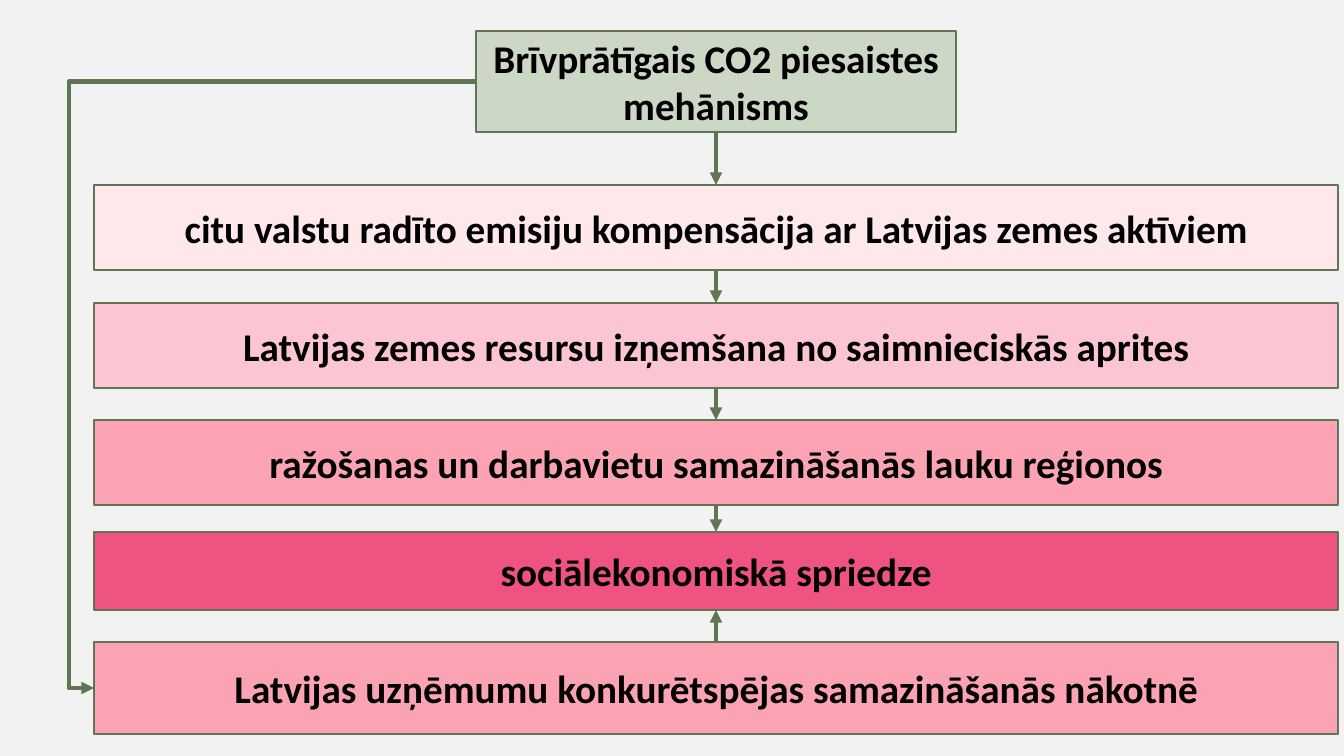
from lxml import etree
from pptx import Presentation
from pptx import util as u
from pptx.dml.color import RGBColor
from pptx.enum import shapes, text
from pptx.oxml.ns import qn

PX = 914400 / 100.8
GREEN = "5F7553"
TOP, LEFT, BOTTOM = 0, 1, 2  # connection sites of a rectangle
ROW_LEFT, ROW_WIDTH = 94, 1244

MECHANISM = ("Brīvprātīgais CO2 piesaistes mehānisms", 476, 31, 480, 101, "CCD7C6")
# wording, top, height, fill
CONSEQUENCES = [
    ("citu valstu radīto emisiju kompensācija ar Latvijas zemes aktīviem", 185, 85, "FEE8EC"),
    ("Latvijas zemes resursu izņemšana no saimnieciskās aprites", 303, 85, "FBC5D4"),
    ("ražošanas un darbavietu samazināšanās lauku reģionos", 420, 85, "FBA3B2"),
    ("sociālekonomiskā spriedze", 532, 78, "EF5380"),
    ("Latvijas uzņēmumu konkurētspējas samazināšanās nākotnē", 642, 92, "FBA3B2"),
]


def px(length):
    return u.Emu(round(length * PX))


def rgb(value):
    return RGBColor.from_string(value)


def set_fill(fill, value):
    fill.solid()
    fill.fore_color.rgb = rgb(value)


def set_line(line, width):
    set_fill(line.fill, GREEN)
    line.width = u.Pt(width)


def add_box(slide, wording, left, top, width, height, fill):
    shape = slide.shapes.add_shape(
        shapes.MSO_SHAPE.RECTANGLE, px(left), px(top), px(width), px(height))
    shape.shadow.inherit = False
    set_fill(shape.fill, fill)
    set_line(shape.line, 1.5)
    frame = shape.text_frame
    frame.word_wrap = True
    frame.vertical_anchor = text.MSO_ANCHOR.MIDDLE
    paragraph = frame.paragraphs[0]
    paragraph.alignment = text.PP_ALIGN.CENTER
    run = paragraph.add_run()
    run.text = wording
    for name, value in {"name": "Calibri", "size": u.Pt(28), "bold": True}.items():
        setattr(run.font, name, value)
    run.font.color.rgb = rgb("000000")
    return shape


def add_arrow(slide, source, source_site, target, target_site, bend=None):
    """Join two boxes; bend is the elbow's offset in 1/100000 of its width."""
    kind = shapes.MSO_CONNECTOR.STRAIGHT if bend is None else shapes.MSO_CONNECTOR.ELBOW
    connector = slide.shapes.add_connector(kind, 0, 0, 0, 0)
    connector.begin_connect(source, source_site)
    connector.end_connect(target, target_site)
    set_line(connector.line, 3)
    properties = connector._element.spPr
    etree.SubElement(properties.find(qn("a:ln")), qn("a:tailEnd"), type="triangle")
    etree.SubElement(properties, qn("a:effectLst"))
    if bend is not None:
        adjustments = properties.find(qn("a:prstGeom")).find(qn("a:avLst"))
        etree.SubElement(adjustments, qn("a:gd"), name="adj1", fmla=f"val {bend}")


def main():
    presentation = Presentation()
    presentation.slide_width, presentation.slide_height = px(1344), px(756)
    slide = presentation.slides.add_slide(presentation.slide_layouts[6])
    set_fill(slide.background.fill, "F2F2F2")

    mechanism = add_box(slide, *MECHANISM)
    rows = [add_box(slide, wording, ROW_LEFT, top, ROW_WIDTH, height, fill)
            for wording, top, height, fill in CONSEQUENCES]
    *chain, competitiveness = rows
    for source, target in zip([mechanism, *chain], chain):
        add_arrow(slide, source, BOTTOM, target, TOP)
    add_arrow(slide, mechanism, LEFT, competitiveness, LEFT, bend=106600)
    add_arrow(slide, competitiveness, TOP, chain[-1], BOTTOM)

    presentation.save("out.pptx")


if __name__ == "__main__":
    main()
